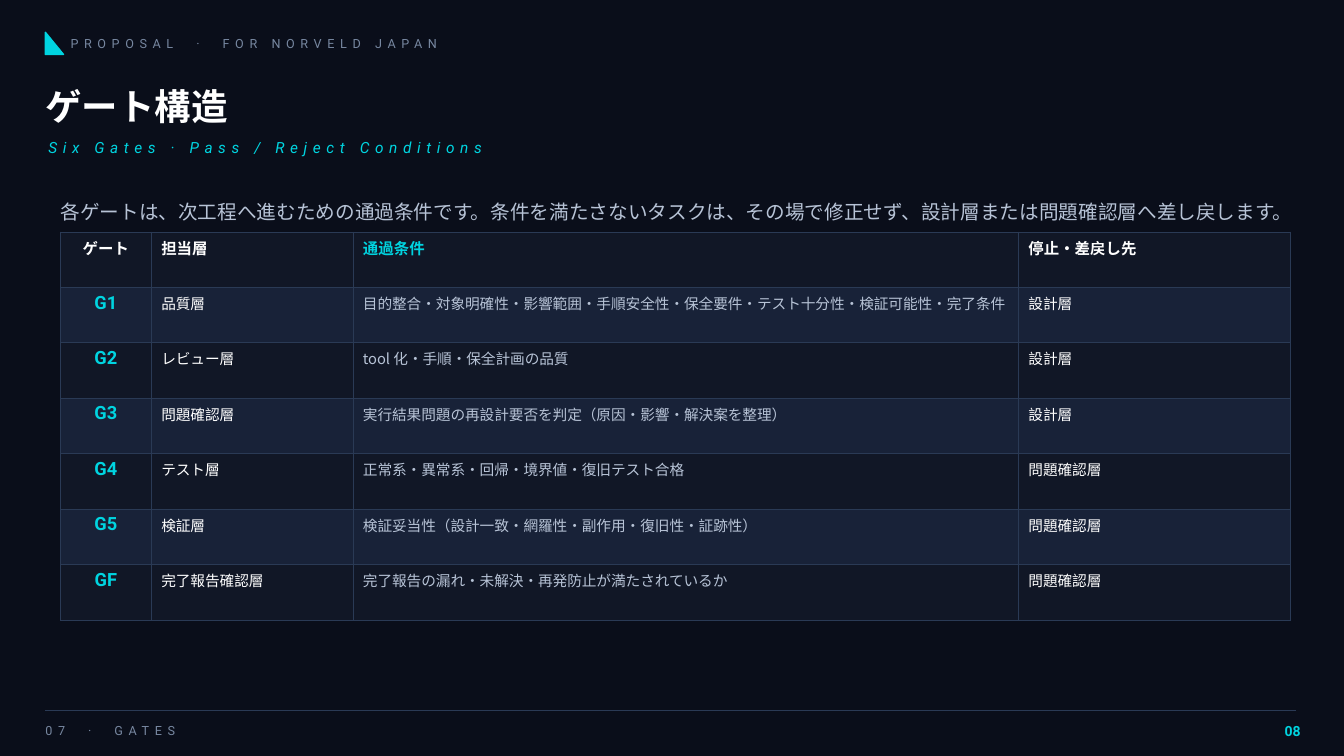
from dataclasses import dataclass

from lxml import etree
from pptx import Presentation
from pptx.dml.color import RGBColor
from pptx.enum.shapes import MSO_CONNECTOR, MSO_SHAPE
from pptx.enum.text import MSO_ANCHOR, PP_ALIGN
from pptx.oxml.ns import qn
from pptx.util import Inches, Pt

LEFT, CENTER, RIGHT = PP_ALIGN.LEFT, PP_ALIGN.CENTER, PP_ALIGN.RIGHT
MIDDLE = MSO_ANCHOR.MIDDLE
TRIANGLE = MSO_SHAPE.RIGHT_TRIANGLE
STRAIGHT = MSO_CONNECTOR.STRAIGHT


@dataclass(frozen=True)
class Theme:
    latin: str = "Roboto"
    japanese: str = "Noto Sans CJK JP"
    background: RGBColor = RGBColor.from_string("0A0E1A")
    accent: RGBColor = RGBColor.from_string("00D4E0")
    white: RGBColor = RGBColor.from_string("FFFFFF")
    body: RGBColor = RGBColor.from_string("B7C3D6")
    muted: RGBColor = RGBColor.from_string("7787A0")
    rule: RGBColor = RGBColor.from_string("2A3A55")
    row_dark: RGBColor = RGBColor.from_string("111726")
    row_light: RGBColor = RGBColor.from_string("182238")
    title_size: float = 26
    lead_size: float = 14
    gate_size: float = 13
    heading_size: float = 11
    cell_size: float = 10.5
    page_size: float = 10
    label_size: float = 9


theme = Theme()


def write(frame, text, font, size, color, bold=False, italic=False, align=LEFT, spacing=0):
    paragraph = frame.paragraphs[0]
    paragraph.alignment = align
    run = paragraph.add_run()
    run.text = text
    run.font.name = font
    run.font.size = Pt(size)
    run.font.color.rgb = color
    run.font.bold = bold
    run.font.italic = italic
    properties = run.font._element
    etree.SubElement(properties, qn("a:ea"), typeface=font)
    if spacing:
        properties.set("spc", str(spacing * 100))


prs = Presentation()
prs.slide_width, prs.slide_height = Inches(13.33), Inches(7.5)
slide = prs.slides.add_slide(prs.slide_layouts[6])
slide.background.fill.solid()
slide.background.fill.fore_color.rgb = theme.background

marker = slide.shapes.add_shape(TRIANGLE, Inches(0.45), Inches(0.32), Inches(0.18), Inches(0.22))
marker.shadow.inherit = False
marker.fill.solid()
marker.fill.fore_color.rgb = theme.accent
marker.line.color.rgb = theme.accent
marker.line.width = Pt(1)

lead = "各ゲートは、次工程へ進むための通過条件です。条件を満たさないタスクは、その場で修正せず、設計層または問題確認層へ差し戻します。"
label = dict(font=theme.latin, size=theme.label_size, color=theme.muted, spacing=4)
texts = [
    (0.7, 0.27, 6, 0.32, dict(label, text="PROPOSAL  ·  FOR NORVELD JAPAN")),
    (0.45, 0.75, 12, 0.6, dict(text="ゲート構造", font=theme.japanese, size=theme.title_size,
                               color=theme.white, bold=True)),
    (0.48, 1.3, 12, 0.32, dict(text="Six Gates · Pass / Reject Conditions", font=theme.latin,
                               size=theme.heading_size, color=theme.accent, italic=True, spacing=4)),
    (0.6, 1.85, 12.2, 0.5, dict(text=lead, font=theme.japanese, size=theme.lead_size,
                                color=theme.body)),
    (0.45, 7.1, 9, 0.3, dict(label, text="07  ·  GATES")),
    (12.45, 7.1, 0.45, 0.3, dict(text="08", font=theme.latin, size=theme.page_size,
                                 color=theme.accent, bold=True, align=RIGHT)),
]
for left, top, width, height, content in texts:
    frame = slide.shapes.add_textbox(
        Inches(left), Inches(top), Inches(width), Inches(height)).text_frame
    frame.word_wrap = True
    frame.vertical_anchor = MIDDLE
    frame.margin_left = frame.margin_right = frame.margin_top = frame.margin_bottom = 0
    write(frame, **content)

gates = [
    ("ゲート", "担当層", "通過条件", "停止・差戻し先"),
    ("G1", "品質層", "目的整合・対象明確性・影響範囲・手順安全性・保全要件・テスト十分性・検証可能性・完了条件", "設計層"),
    ("G2", "レビュー層", "tool 化・手順・保全計画の品質", "設計層"),
    ("G3", "問題確認層", "実行結果問題の再設計要否を判定（原因・影響・解決案を整理）", "設計層"),
    ("G4", "テスト層", "正常系・異常系・回帰・境界値・復旧テスト合格", "問題確認層"),
    ("G5", "検証層", "検証妥当性（設計一致・網羅性・副作用・復旧性・証跡性）", "問題確認層"),
    ("GF", "完了報告確認層", "完了報告の漏れ・未解決・再発防止が満たされているか", "問題確認層"),
]
column_widths = [0.9, 2, 6.6, 2.7]
row_height = 0.55
heading_colors = [theme.white, theme.white, theme.accent, theme.white]
cell_colors = [theme.accent, theme.white, theme.body, theme.white]

table = slide.shapes.add_table(
    len(gates), len(column_widths), Inches(0.6), Inches(2.3),
    Inches(sum(column_widths)), Inches(row_height * len(gates))).table
for column, width in zip(table.columns, column_widths):
    column.width = Inches(width)

for r, gate in enumerate(gates):
    table.rows[r].height = Inches(row_height)
    for c, text in enumerate(gate):
        cell = table.cell(r, c)
        align = CENTER if c == 0 else LEFT
        if r == 0:
            write(cell.text_frame, text, theme.japanese, theme.heading_size,
                  heading_colors[c], bold=True, align=align)
        elif c == 0:
            write(cell.text_frame, text, theme.latin, theme.gate_size,
                  cell_colors[c], bold=True, align=align)
        else:
            write(cell.text_frame, text, theme.japanese, theme.cell_size, cell_colors[c])
        borders = cell._tc.get_or_add_tcPr()
        for side in ("a:lnL", "a:lnR", "a:lnT", "a:lnB"):
            border = etree.SubElement(borders, qn(side), w=str(Pt(0.5)))
            paint = etree.SubElement(border, qn("a:solidFill"))
            etree.SubElement(paint, qn("a:srgbClr"), val=str(theme.rule))
        cell.fill.solid()
        cell.fill.fore_color.rgb = theme.row_light if r % 2 else theme.row_dark

footer_rule = slide.shapes.add_connector(
    STRAIGHT, Inches(0.45), Inches(7.05), Inches(12.85), Inches(7.05))
footer_rule.line.color.rgb = theme.rule
footer_rule.line.width = Pt(0.6)
etree.SubElement(footer_rule._element.spPr, qn("a:effectLst"))

prs.save("out.pptx")
